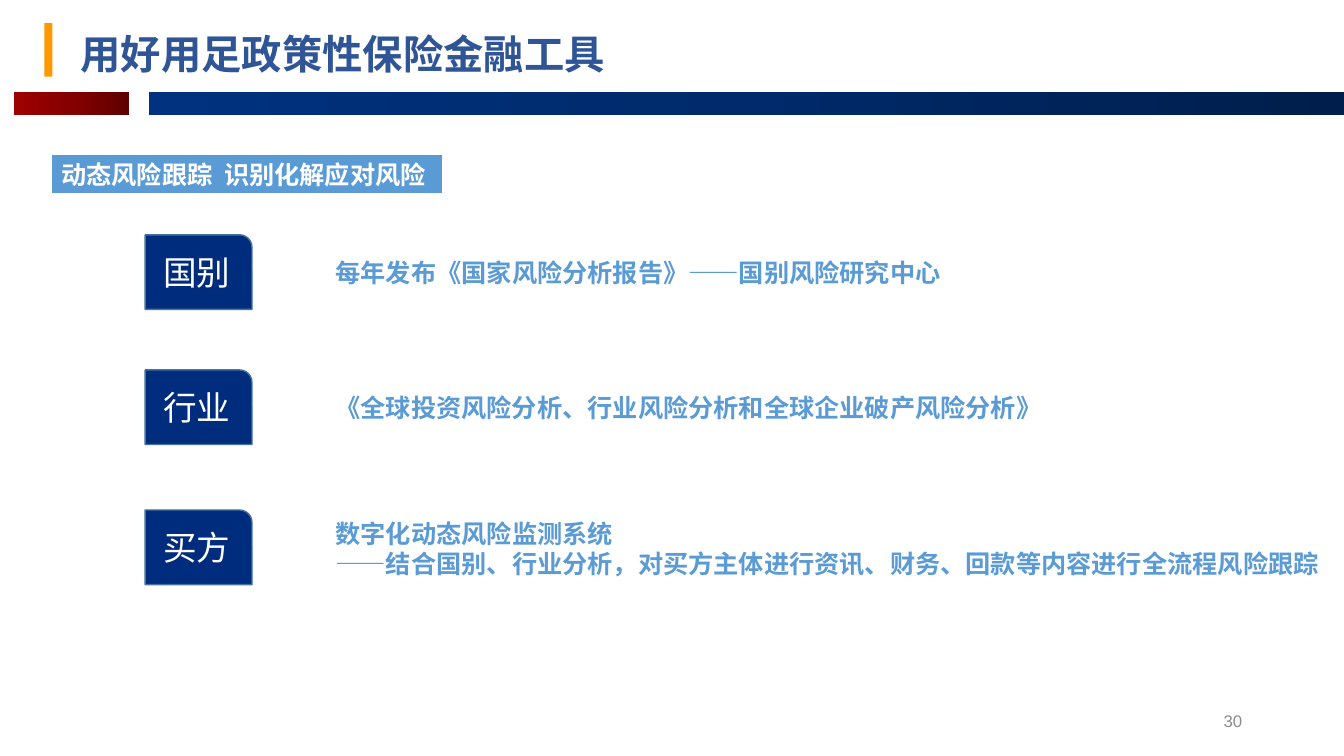
from copy import deepcopy
from dataclasses import dataclass

from lxml import etree
from pptx import Presentation
from pptx.dml.color import RGBColor
from pptx.enum.shapes import MSO_SHAPE
from pptx.enum.text import MSO_ANCHOR, PP_ALIGN
from pptx.oxml.ns import qn
from pptx.util import Inches, Pt

RECTANGLE = MSO_SHAPE.RECTANGLE
TAB_SHAPE = MSO_SHAPE.ROUND_1_RECTANGLE
LEFT, CENTER, RIGHT = PP_ALIGN.LEFT, PP_ALIGN.CENTER, PP_ALIGN.RIGHT
TOP, MIDDLE = MSO_ANCHOR.TOP, MSO_ANCHOR.MIDDLE
CJK_FONT = "Noto Sans CJK SC"

COLORS = {
    "white": "FFFFFF",
    "orange": "FF9900",
    "title": "2F5597",
    "sky": "5B9BD5",
    "navy": "002C7E",
    "tab_line": "43739E",
    "gray": "8C8C8C",
}


@dataclass
class Band:
    left: float
    width: float
    stops: tuple[str, str, str]


@dataclass
class RiskRow:
    label: str
    tab_top: float
    text_top: float
    text_height: float
    lines: list[str]
    text_width: float = 10.11
    wrap: bool = True


BANDS = [
    Band(0.14, 1.14, ("5E0000", "850000", "9E0000")),
    Band(1.48, 11.85, ("001E4B", "002A6B", "00327F")),
]
ROWS = [
    RiskRow("国别", 2.33, 2.5, 0.4, ["每年发布《国家风险分析报告》——国别风险研究中心"]),
    RiskRow("行业", 3.67, 3.84, 0.4,
            ["《全球投资风险分析、行业风险分析和全球企业破产风险分析》"],
            text_width=7.2, wrap=False),
    RiskRow("买方", 5.06, 5.09, 1.01,
            ["数字化动态风险监测系统",
             "——结合国别、行业分析，对买方主体进行资讯、财务、回款等内容进行全流程风险跟踪"]),
]


def rgb(name: str) -> RGBColor:
    return RGBColor.from_string(COLORS[name])


def write_text(box, lines: list[str], *, size: float, color: str, bold: bool = False,
               font: str = CJK_FONT, align=LEFT, anchor=TOP, wrap: bool = True,
               spacing: float = 1.0) -> None:
    frame = box.text_frame
    frame.word_wrap = wrap
    frame.vertical_anchor = anchor
    for index, line in enumerate(lines):
        para = frame.add_paragraph() if index else frame.paragraphs[0]
        para.alignment = align
        para.line_spacing = spacing
        span = para.add_run()
        span.text = line
        span.font.name = font
        span.font.size = Pt(size)
        span.font.bold = bold
        span.font.color.rgb = rgb(color)
        east_asian = etree.Element(qn("a:ea"), typeface=CJK_FONT)
        span.font._element.find(qn("a:latin")).addnext(east_asian)


def add_box(page, kind, left: float, top: float, width: float, height: float,
            fill: str | None = None, line: str | None = None, line_width: float = 1):
    box = page.shapes.add_shape(kind, Inches(left), Inches(top), Inches(width), Inches(height))
    box.shadow.inherit = False
    if fill:
        box.fill.solid()
        box.fill.fore_color.rgb = rgb(fill)
    if line:
        box.line.color.rgb = rgb(line)
        box.line.width = Pt(line_width)
    else:
        box.line.fill.background()
    return box


def add_text(page, left: float, top: float, width: float, height: float,
             lines: list[str], **text_format) -> None:
    box = page.shapes.add_textbox(Inches(left), Inches(top), Inches(width), Inches(height))
    write_text(box, lines, **text_format)


def add_band(page, band: Band) -> None:
    """Draw a header bar whose three colour stops run from right to left."""
    box = add_box(page, RECTANGLE, band.left, 0.91, band.width, 0.23)
    box.fill.gradient()
    box.fill.gradient_angle = 180
    stop_list = box._element.spPr.find(qn("a:gradFill")).find(qn("a:gsLst"))
    stop_list.append(deepcopy(stop_list[0]))
    for index, (stop, color) in enumerate(zip(box.fill.gradient_stops, band.stops)):
        stop.position = index / 2
        stop.color.rgb = RGBColor.from_string(color)


def add_row(page, row: RiskRow) -> None:
    tab = add_box(page, TAB_SHAPE, 1.44, row.tab_top, 1.06, 0.74, "navy", "tab_line")
    write_text(tab, [row.label], size=24, color="white", align=CENTER, anchor=MIDDLE)
    add_text(page, 3.23, row.text_top, row.text_width, row.text_height, row.lines,
             size=18, color="sky", bold=True, wrap=row.wrap)


def main() -> None:
    deck = Presentation()
    deck.slide_width, deck.slide_height = Inches(13.33), Inches(7.5)
    page = deck.slides.add_slide(deck.slide_layouts[5])

    add_box(page, RECTANGLE, 0.44, 0.23, 0.08, 0.53, "orange")
    for band in BANDS:
        add_band(page, band)

    title = page.shapes.title
    title.left, title.top = Inches(0.7), Inches(0.24)
    title.width, title.height = Inches(8.94), Inches(0.64)
    write_text(title, ["用好用足政策性保险金融工具"], size=28.8, color="title", bold=True,
               font="Montserrat", anchor=MIDDLE, spacing=0.9)

    heading = add_box(page, RECTANGLE, 0.51, 1.53, 3.88, 0.4, "sky", "white", 1.5)
    write_text(heading, ["动态风险跟踪  识别化解应对风险"], size=18, color="white", bold=True)

    for row in ROWS:
        add_row(page, row)

    add_text(page, 9.42, 6.95, 3, 0.4, ["30"], size=12, color="gray", font="Arial",
             align=RIGHT, anchor=MIDDLE)
    deck.save("out.pptx")


if __name__ == "__main__":
    main()
